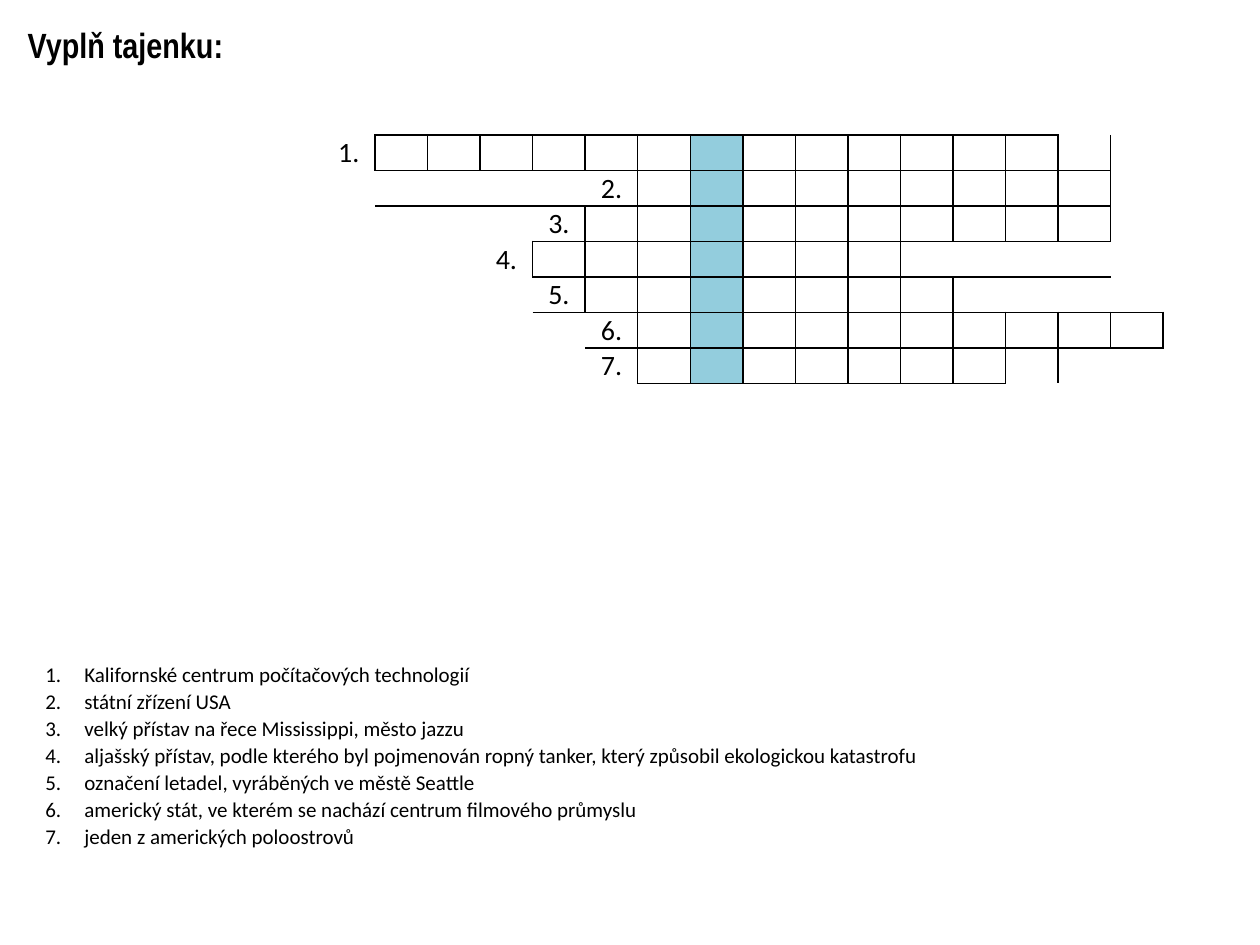
from lxml.etree import SubElement
from pptx import Presentation
from pptx.dml.color import RGBColor
from pptx.enum.text import MSO_ANCHOR as Anchor, PP_ALIGN as Align
from pptx.oxml.ns import qn
from pptx.util import Inches, Pt

BLACK = RGBColor(0x00, 0x00, 0x00)
WHITE = RGBColor(0xFF, 0xFF, 0xFF)
AQUA = RGBColor(0x93, 0xCD, 0xDD)
NO_STYLE = "{2D5ABB26-0587-4C30-8999-92F81FD0307C}"

# First and last letter column of each crossword row
ANSWERS = [(1, 13), (6, 14), (5, 14), (4, 9), (5, 10), (6, 15), (6, 12)]
SECRET_COLUMN = 7
COLUMN_COUNT = 16

# Clue and the number of columns it spans
CLUES = [
    ("Kalifornské centrum počítačových technologií", 1),
    ("státní zřízení USA", 1),
    ("velký přístav na řece Mississippi, město jazzu", 3),
    ("aljašský přístav, podle kterého byl pojmenován ropný tanker, "
     "který způsobil ekologickou katastrofu", 8),
    ("označení letadel, vyráběných ve městě Seattle", 3),
    ("americký stát, ve kterém se nachází centrum filmového průmyslu", 5),
    ("jeden z amerických poloostrovů", 2),
]


def is_letter(row, column):
    if not 0 <= row < len(ANSWERS):
        return False
    first, last = ANSWERS[row]
    return first <= column <= last


class SlideBuilder:
    """Holds the text style and the current slide."""

    title_font = {"name": "Arial Narrow", "size": Pt(20), "bold": True}
    cell_format = {"margin_left": Inches(0.01), "margin_right": Inches(0.01),
                   "margin_top": Inches(0.01), "margin_bottom": 0,
                   "vertical_anchor": Anchor.BOTTOM}

    def __init__(self, slide):
        self.slide = slide

    def apply(self, target, values):
        for name, value in values.items():
            setattr(target, name, value)

    def title(self, text, left, top, width, height):
        shape = self.slide.shapes.title
        self.apply(shape, {"left": Inches(left), "top": Inches(top),
                           "width": Inches(width), "height": Inches(height)})
        frame = shape.text_frame
        frame.text = text
        frame.vertical_anchor = Anchor.MIDDLE
        paragraph = frame.paragraphs[0]
        paragraph.alignment = Align.LEFT
        font = paragraph.runs[0].font
        self.apply(font, self.title_font)
        font.color.rgb = BLACK

    def table(self, left, top, widths, row_count, row_height, size):
        shape = self.slide.shapes.add_table(
            row_count, len(widths), Inches(left), Inches(top),
            Inches(sum(widths)), Inches(row_height * row_count))
        table = shape.table
        self.apply(table, {"first_row": False, "horz_banding": False})
        table._tbl.tblPr.find(qn("a:tableStyleId")).text = NO_STYLE
        for column, width in zip(table.columns, widths):
            column.width = Inches(width)
        # Empty cells take the text size too, so that rows stay low
        for cell in table.iter_cells():
            self.apply(cell, self.cell_format)
            paragraph = cell.text_frame.paragraphs[0]
            paragraph._p.get_or_add_endParaRPr().set("sz", str(size * 100))
        return table

    def cell_text(self, cell, text, size, alignment):
        paragraph = cell.text_frame.paragraphs[0]
        paragraph.alignment = alignment
        run = paragraph.add_run()
        run.text = text
        self.apply(run.font, {"name": "Calibri", "size": Pt(size)})
        run.font.color.rgb = BLACK

    def cell_borders(self, cell, sides):
        properties = cell._tc.get_or_add_tcPr()
        for side in sides:
            line = SubElement(properties, qn(f"a:ln{side}"), w=str(Pt(1)))
            fill = SubElement(line, qn("a:solidFill"))
            SubElement(fill, qn("a:srgbClr"), val=str(BLACK))

    def crossword(self, left, top):
        size = 16
        table = self.table(left, top, [0.417] * COLUMN_COUNT,
                           len(ANSWERS), 0.27, size)
        for row, (first, _) in enumerate(ANSWERS):
            for column in range(COLUMN_COUNT):
                cell = table.cell(row, column)
                neighbours = {"L": (row, column - 1), "R": (row, column + 1),
                              "T": (row - 1, column), "B": (row + 1, column)}
                letter = is_letter(row, column)
                self.cell_borders(cell, [side for side, place in neighbours.items()
                                         if letter or is_letter(*place)])
                cell.fill.solid()
                secret = letter and column == SECRET_COLUMN
                cell.fill.fore_color.rgb = AQUA if secret else WHITE
            self.cell_text(table.cell(row, first - 1), f"{row + 1}.",
                           size, Align.CENTER)

    def clues(self, left, top):
        size = 12
        table = self.table(left, top, [0.31, 3.55, 0.11] + [0.79] * 6,
                           len(CLUES), 0.21, size)
        for row, (clue, span) in enumerate(CLUES):
            cell = table.cell(row, 1)
            if span > 1:
                cell.merge(table.cell(row, span))
            self.cell_text(table.cell(row, 0), f"{row + 1}.", size, Align.LEFT)
            self.cell_text(cell, clue, size, Align.LEFT)


def main():
    presentation = Presentation()
    presentation.slide_width = Inches(10)
    presentation.slide_height = Inches(7.5)
    layout = presentation.slide_layouts[5]
    builder = SlideBuilder(presentation.slides.add_slide(layout))

    # Heading, crossword grid and numbered clues
    builder.title("Vyplň tajenku:", 0.12, 0.05, 9, 0.61)
    builder.crossword(2.56, 1.07)
    builder.clues(0.35, 5.25)

    presentation.save("out.pptx")


if __name__ == "__main__":
    main()
